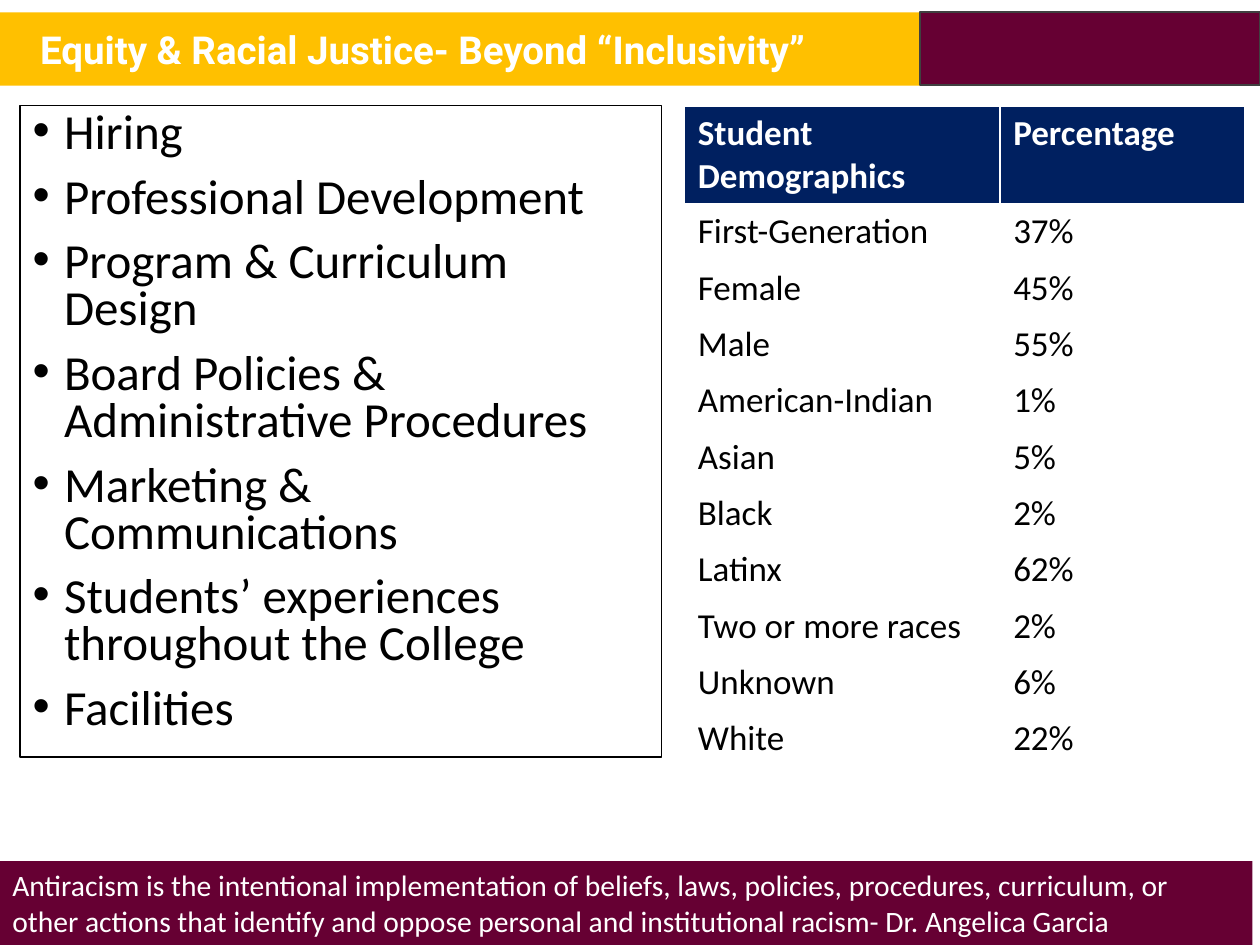
from dataclasses import dataclass

from lxml import etree
from pptx import Presentation
from pptx.dml.color import RGBColor
from pptx.enum.shapes import MSO_SHAPE
from pptx.enum.text import MSO_ANCHOR, MSO_AUTO_SIZE, PP_ALIGN
from pptx.oxml.ns import qn
from pptx.util import Pt

RECTANGLE = MSO_SHAPE.RECTANGLE
TOP, MIDDLE = MSO_ANCHOR.TOP, MSO_ANCHOR.MIDDLE
LEFT = PP_ALIGN.LEFT
NO_AUTOFIT = MSO_AUTO_SIZE.NONE
TITLE_ONLY = 5


@dataclass(frozen=True)
class Theme:
    gold: RGBColor = RGBColor(0xFF, 0xC0, 0x00)
    maroon: RGBColor = RGBColor(0x66, 0x00, 0x33)
    navy: RGBColor = RGBColor(0x00, 0x20, 0x60)
    gray: RGBColor = RGBColor(0x40, 0x40, 0x40)
    white: RGBColor = RGBColor(0xFF, 0xFF, 0xFF)
    black: RGBColor = RGBColor(0x00, 0x00, 0x00)
    title_font: str = "Roboto"
    body_font: str = "Calibri"
    title_size: float = 22
    topic_size: float = 28
    table_size: float = 20
    quote_size: float = 16.9


@dataclass(frozen=True)
class Box:
    left: float
    top: float
    width: float
    height: float

    def lengths(self):
        return Pt(self.left), Pt(self.top), Pt(self.width), Pt(self.height)


@dataclass(frozen=True)
class Demographic:
    group: str
    percentage: str


THEME = Theme()
TITLE_BOX = Box(0, 7, 561.6, 42)
ACCENT_BOX = Box(525.6, 7, 194.4, 41.5)
TOPICS_BOX = Box(11.5, 60.5, 366.5, 372.2)
TABLE_BOX = Box(391.2, 60.5, 320, 377.4)
QUOTE_BOX = Box(0, 492, 715.7, 48)
COLUMN_WIDTHS = (180.2, 139.8)
HEADER_HEIGHT, ROW_HEIGHT = 55.4, 32.2

TITLE = "Equity & Racial Justice- Beyond “Inclusivity”"
TOPICS = (
    "Hiring",
    "Professional Development",
    "Program & Curriculum Design",
    "Board Policies & Administrative Procedures",
    "Marketing & Communications",
    "Students’ experiences throughout the College",
    "Facilities",
)
HEADER = Demographic("Student Demographics", "Percentage")
DEMOGRAPHICS = (
    Demographic("First-Generation", "37%"),
    Demographic("Female", "45%"),
    Demographic("Male", "55%"),
    Demographic("American-Indian", "1%"),
    Demographic("Asian", "5%"),
    Demographic("Black", "2%"),
    Demographic("Latinx", "62%"),
    Demographic("Two or more races", "2%"),
    Demographic("Unknown", "6%"),
    Demographic("White", "22%"),
)
QUOTE = (
    "Antiracism is the intentional implementation of beliefs, laws, policies, "
    "procedures, curriculum, or other actions that identify and oppose personal "
    "and institutional racism- Dr. Angelica Garcia"
)


def fill_solid(target, color: RGBColor) -> None:
    target.fill.solid()
    target.fill.fore_color.rgb = color


def format_paragraph(paragraph, size: float, color: RGBColor,
                     bold: bool = False, name: str = THEME.body_font) -> None:
    paragraph.alignment = LEFT
    font = paragraph.font
    font.name, font.size, font.bold = name, Pt(size), bold
    font.color.rgb = color


def add_bullet(paragraph, indent: float) -> None:
    properties = paragraph._p.get_or_add_pPr()
    properties.set("marL", str(Pt(indent)))
    properties.set("indent", str(Pt(-indent)))
    etree.SubElement(properties, qn("a:buFont")).set("typeface", "Arial")
    etree.SubElement(properties, qn("a:buChar")).set("char", "•")


def add_rectangle(slide, box: Box, fill: RGBColor,
                  line: RGBColor | None = None, line_width: float = 1):
    shape = slide.shapes.add_shape(RECTANGLE, *box.lengths())
    shape.shadow.inherit = False
    fill_solid(shape, fill)
    if line is None:
        shape.line.fill.background()
    else:
        shape.line.color.rgb = line
        shape.line.width = Pt(line_width)
    shape.text_frame.word_wrap = True
    shape.text_frame.vertical_anchor = TOP
    return shape


def format_title(slide) -> None:
    title = slide.shapes.title
    title.left, title.top, title.width, title.height = TITLE_BOX.lengths()
    fill_solid(title, THEME.gold)
    frame = title.text_frame
    frame.text = TITLE
    frame.auto_size = NO_AUTOFIT
    frame.vertical_anchor = MIDDLE
    frame.margin_left = Pt(23)
    format_paragraph(frame.paragraphs[0], THEME.title_size, THEME.white,
                     bold=True, name=THEME.title_font)


def add_topics(slide) -> None:
    frame = add_rectangle(slide, TOPICS_BOX, THEME.white, THEME.black, 0.75).text_frame
    frame.text = "\n".join(TOPICS)
    for index, paragraph in enumerate(frame.paragraphs):
        paragraph.line_spacing = 0.8
        paragraph.space_before = Pt(10 if index else 0)
        add_bullet(paragraph, 18)
        format_paragraph(paragraph, THEME.topic_size, THEME.black)


def add_demographics(slide) -> None:
    rows = (HEADER, *DEMOGRAPHICS)
    table = slide.shapes.add_table(len(rows), len(COLUMN_WIDTHS), *TABLE_BOX.lengths()).table
    table.horz_banding = False
    for column, width in zip(table.columns, COLUMN_WIDTHS):
        column.width = Pt(width)
    for row, demographic in zip(table.rows, rows):
        is_header = demographic is HEADER
        row.height = Pt(HEADER_HEIGHT if is_header else ROW_HEIGHT)
        for cell, text in zip(row.cells, (demographic.group, demographic.percentage)):
            cell.text = text
            cell.margin_left = cell.margin_right = Pt(7.6)
            fill_solid(cell, THEME.navy if is_header else THEME.white)
            format_paragraph(cell.text_frame.paragraphs[0], THEME.table_size,
                             THEME.white if is_header else THEME.black, is_header)


def add_quote(slide) -> None:
    frame = add_rectangle(slide, QUOTE_BOX, THEME.maroon).text_frame
    frame.text = QUOTE
    format_paragraph(frame.paragraphs[0], THEME.quote_size, THEME.white)


def main() -> None:
    presentation = Presentation()
    presentation.slide_width, presentation.slide_height = Pt(720), Pt(540)
    slide = presentation.slides.add_slide(presentation.slide_layouts[TITLE_ONLY])
    format_title(slide)
    add_rectangle(slide, ACCENT_BOX, THEME.maroon, THEME.gray)
    add_topics(slide)
    add_demographics(slide)
    add_quote(slide)
    presentation.save("out.pptx")


if __name__ == "__main__":
    main()
